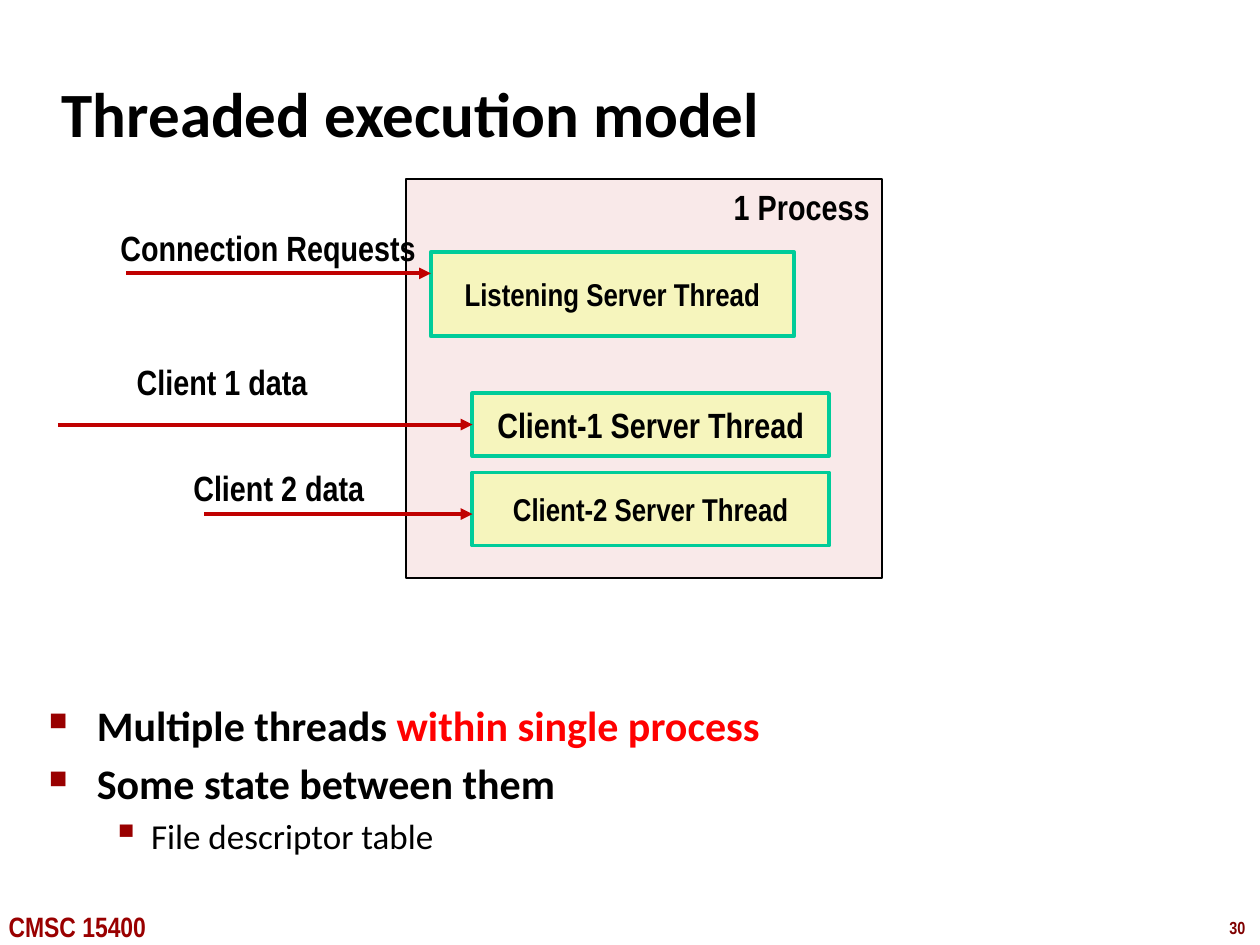
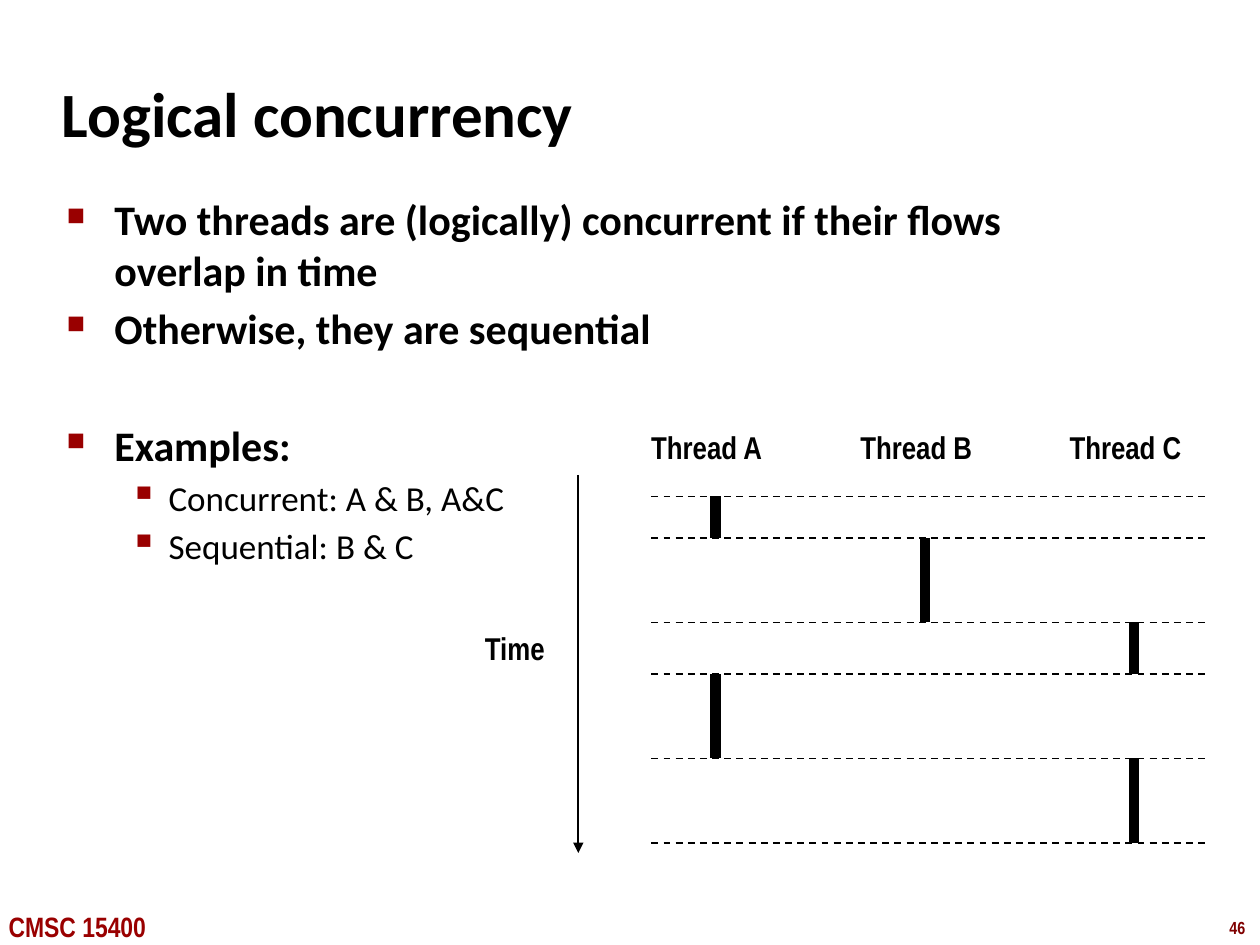
from lxml.etree import SubElement
from pptx import Presentation
from pptx.dml.color import RGBColor
from pptx.enum.dml import MSO_LINE
from pptx.enum.shapes import MSO_CONNECTOR, MSO_SHAPE
from pptx.enum.text import MSO_ANCHOR, MSO_AUTO_SIZE, PP_ALIGN
from pptx.oxml.ns import qn
from pptx.util import Inches, Pt

BLACK, RED, MAROON, DARK_RED = "000000", "FF0000", "990000", "800000"
ARROW_RED, PINK, YELLOW, GREEN = "C00000", "F1C7C7", "F6F5BD", "00CC99"
HEAD_FONT, LABEL_FONT = "Calibri", "Arial Narrow"
TITLE_ONLY = 5
LEFT_SIDE = 1

# Per level: text size, bold, left margin, indent, space before, bullet, bullet %
LEVELS = [
    (24, True, 0.38, -0.38, 4.5, "■", 60),
    (20, False, 0.81, -0.31, 3.6, "▪", 110),
]


def rgb(hex_colour):
    return RGBColor.from_string(hex_colour)


def set_font(font, name, size, colour=BLACK, bold=True):
    font.name, font.size, font.bold = name, Pt(size), bold
    font.color.rgb = rgb(colour)


def set_indent(p, margin, indent):
    pPr = p._p.get_or_add_pPr()
    pPr.set("marL", str(Inches(margin)))
    pPr.set("indent", str(Inches(indent)))
    return pPr


def add_bullet(pPr, char, percent):
    colour = SubElement(pPr, qn("a:buClr"))
    SubElement(colour, qn("a:srgbClr"), val=MAROON)
    SubElement(pPr, qn("a:buSzPct"), val=str(percent * 1000))
    SubElement(pPr, qn("a:buChar"), char=char)


class Deck:
    def __init__(self):
        self.prs = Presentation()
        self.prs.slide_width, self.prs.slide_height = Inches(10), Inches(7.5)
        self.s = None

    def slide(self, title, number):
        self.s = self.prs.slides.add_slide(self.prs.slide_layouts[TITLE_ONLY])
        sp = self.s.shapes.title
        sp.left, sp.top = Inches(0.39), Inches(0.48)
        sp.width, sp.height = Inches(8.3), Inches(0.83)
        tf = sp.text_frame
        tf.text = title
        tf.auto_size = MSO_AUTO_SIZE.NONE
        tf.vertical_anchor = MSO_ANCHOR.MIDDLE
        p = tf.paragraphs[0]
        p.alignment = PP_ALIGN.LEFT
        set_indent(p, 0.13, -0.13)
        set_font(p.runs[0].font, HEAD_FONT, 36)
        self.label(number, 9.66, 7.23, 0.34, 0.27, 10, DARK_RED)
        self.label("CMSC 15400", -0.03, 7.17, 1.42, 0.37, 16, MAROON)

    def label(self, text, left, top, width, height=0.4, size=18,
              colour=BLACK, align=PP_ALIGN.LEFT):
        sp = self.s.shapes.add_textbox(
            Inches(left), Inches(top), Inches(width), Inches(height))
        tf = sp.text_frame
        tf.text = text
        tf.word_wrap = False
        tf.auto_size = MSO_AUTO_SIZE.SHAPE_TO_FIT_TEXT
        p = tf.paragraphs[0]
        p.alignment = align
        set_font(p.runs[0].font, LABEL_FONT, size, colour)

    def bullets(self, left, top, width, height, items):
        """Each item is (level, [(text, colour), ...], extra space before)."""
        sp = self.s.shapes.add_textbox(
            Inches(left), Inches(top), Inches(width), Inches(height))
        tf = sp.text_frame
        tf.word_wrap = True
        for i, (level, runs, gap) in enumerate(items):
            size, bold, margin, indent, before, char, percent = LEVELS[level]
            p = tf.add_paragraph() if i else tf.paragraphs[0]
            p.level = level
            p.space_before = Pt(before + gap if i else 0)
            add_bullet(set_indent(p, margin, indent), char, percent)
            for text, colour in runs:
                r = p.add_run()
                r.text = text
                set_font(r.font, HEAD_FONT, size, colour, bold)

    def box(self, left, top, width, height, fill, line, weight,
            text="", size=18, opacity=100):
        sp = self.s.shapes.add_shape(
            MSO_SHAPE.RECTANGLE,
            Inches(left), Inches(top), Inches(width), Inches(height))
        sp.shadow.inherit = False
        sp.fill.solid()
        sp.fill.fore_color.rgb = rgb(fill)
        if opacity < 100:
            clr = sp._element.spPr.find(qn("a:solidFill")).find(qn("a:srgbClr"))
            SubElement(clr, qn("a:alpha"), val=str(opacity * 1000))
        sp.line.color.rgb = rgb(line)
        sp.line.width = Pt(weight)
        if text:
            tf = sp.text_frame
            tf.text = text
            tf.word_wrap = False
            tf.vertical_anchor = MSO_ANCHOR.MIDDLE
            p = tf.paragraphs[0]
            p.alignment = PP_ALIGN.CENTER
            set_font(p.runs[0].font, LABEL_FONT, size)
        return sp

    def line(self, x1, y1, x2, y2, colour=BLACK, weight=1,
             arrow=False, dashed=False):
        c = self.s.shapes.add_connector(
            MSO_CONNECTOR.STRAIGHT,
            Inches(x1), Inches(y1), Inches(x2), Inches(y2))
        c.line.color.rgb = rgb(colour)
        c.line.width = Pt(weight)
        if dashed:
            c.line.dash_style = MSO_LINE.DASH
        if arrow:
            SubElement(c.line._get_or_add_ln(), qn("a:tailEnd"), type="triangle")
        SubElement(c._element.spPr, qn("a:effectLst"))
        return c


def threaded_model(deck):
    deck.slide("Threaded execution model", "30")
    deck.box(3.22, 1.42, 3.78, 3.17, PINK, BLACK, 1, opacity=38)
    deck.bullets(0.29, 5.5, 9.09, 1.75, [
        (0, [("Multiple threads ", BLACK), ("within single process", RED)], 0),
        (0, [("Some state between them", BLACK)], 0),
        (1, [("File descriptor table", BLACK)], 0),
    ])
    threads = [
        ("Listening Server Thread", 3.42, 2, 2.88, 0.67, 18),
        ("Client-1 Server Thread", 3.75, 3.12, 2.83, 0.5, 20),
        ("Client-2 Server Thread", 3.75, 3.75, 2.83, 0.58, 18),
    ]
    listening, client_1, client_2 = [
        deck.box(left, top, width, height, YELLOW, GREEN, 2.25, text, size)
        for text, left, top, width, height, size in threads]
    deck.line(1, 2.17, 3.42, 2.17, ARROW_RED, 2.25, arrow=True)
    to_client_1 = deck.line(0.46, 3.37, 3.75, 3.37, ARROW_RED, 2.25, arrow=True)
    to_client_1.end_connect(client_1, LEFT_SIDE)
    deck.line(1.62, 4.08, 3.75, 4.08, ARROW_RED, 2.25, arrow=True)
    for text, left, top, width in [
        ("Connection Requests", 0.83, 1.75, 2.57),
        ("Client 1 data", 0.97, 2.81, 1.57),
        ("Client 2 data", 1.42, 3.65, 1.57),
        ("1 Process", 5.71, 1.42, 1.29),
    ]:
        deck.label(text, left, top, width, 0.44, 20, align=PP_ALIGN.RIGHT)


def logical_concurrency(deck):
    deck.slide("Logical concurrency", "46")
    deck.bullets(0.43, 1.49, 8.64, 5.44, [
        (0, [("Two threads are (logically) concurrent if their flows "
              "overlap in time", BLACK)], 0),
        (0, [("Otherwise, they are sequential", BLACK)], 0),
        (0, [("Examples:", BLACK)], 33.5),
        (1, [("Concurrent: A & B, A&C", BLACK)], 0),
        (1, [("Sequential: B & C", BLACK)], 0),
    ])
    deck.line(4.59, 3.77, 4.59, 6.77, arrow=True)
    deck.label("Time", 3.75, 4.94, 0.68)

    lanes = {name: 5.68 + 1.66 * i for i, name in enumerate("ABC")}
    switches = [3.94, 4.27, 4.94, 5.35, 6.02, 6.69]
    for name, x in lanes.items():
        deck.label(f"Thread {name}", x - 0.61, 3.35, 1.1)
    for running, start, end in zip("ABCAC", switches, switches[1:]):
        deck.line(lanes[running], start, lanes[running], end, weight=6)
    for y in switches:
        deck.line(5.17, y, 9.59, y, dashed=True)


def main():
    deck = Deck()
    threaded_model(deck)
    logical_concurrency(deck)
    deck.prs.save("out.pptx")


if __name__ == "__main__":
    main()
